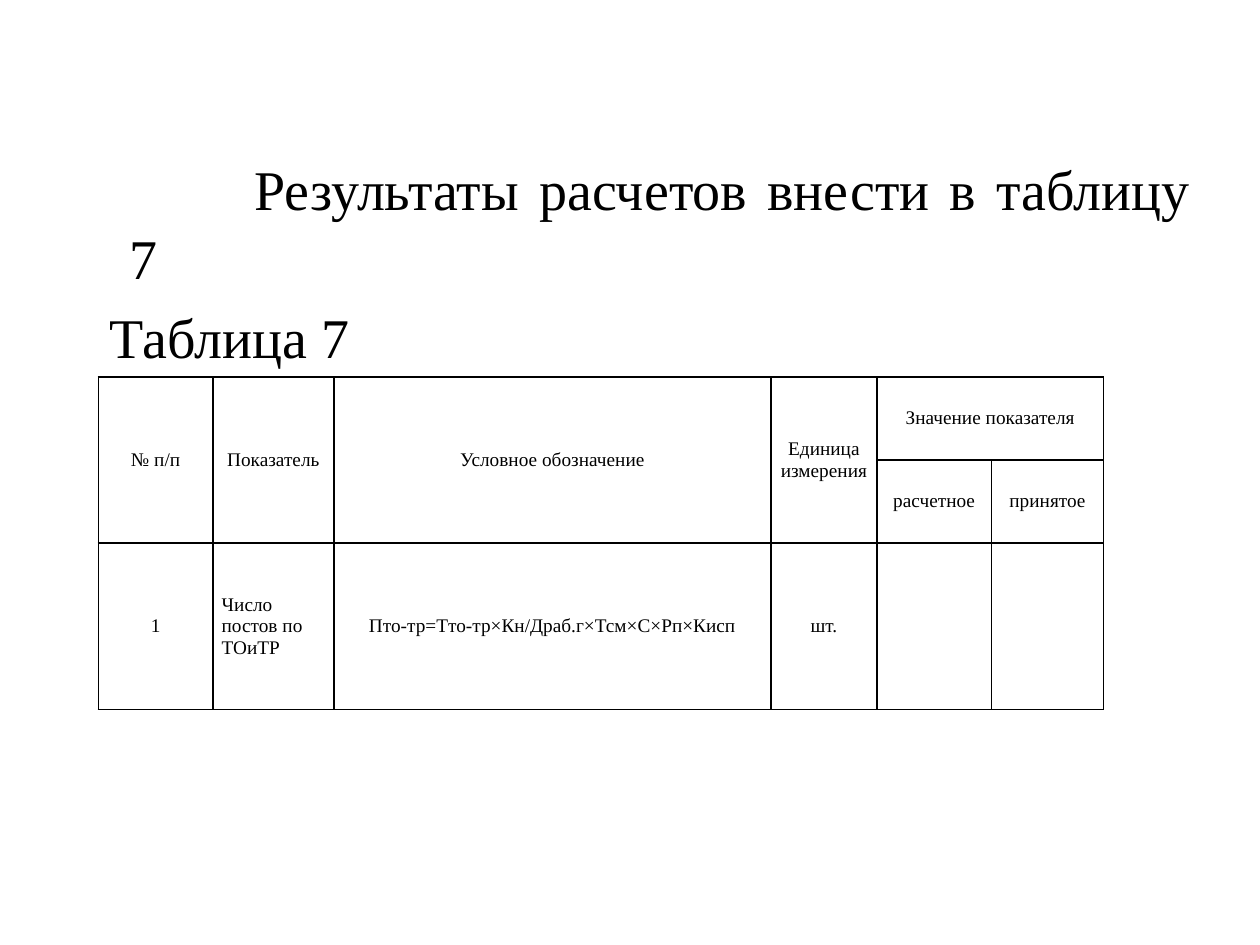
from lxml.etree import SubElement
from pptx import Presentation
from pptx.dml.color import RGBColor
from pptx.enum.text import MSO_ANCHOR, MSO_AUTO_SIZE, PP_ALIGN
from pptx.oxml import parse_xml
from pptx.oxml.ns import nsdecls, qn
from pptx.util import Inches, Pt

BLACK = RGBColor(0, 0, 0)
WHITE = RGBColor(255, 255, 255)
FONT = "Times New Roman"

COLUMN_WIDTHS = [0.91, 0.96, 3.47, 0.84, 0.91, 0.89]
ROW_HEIGHTS = [0.66, 0.66, 1.32]
ROWS = [
    ["№ п/п", "Показатель", "Условное обозначение", "Единица измерения",
     "Значение показателя", ""],
    ["", "", "", "", "расчетное", "принятое"],
    ["1", "Число постов по ТОиТР", "Пто-тр=Тто-тр×Кн/Драб.г×Тсм×С×Рп×Кисп",
     "шт.", "", ""],
]
# First and last cell of each merged block, as (row, column)
MERGES = [((0, column), (1, column)) for column in range(4)] + [((0, 4), (0, 5))]
LEFT_ALIGNED = (2, 1)


def write_text(paragraph, text, size=11, align=PP_ALIGN.CENTER, color=BLACK):
    """Put text in a paragraph with the given format."""
    paragraph.alignment = align
    paragraph.font.size = Pt(size)
    if text:
        run = paragraph.add_run()
        run.text = text
        run.font.name = FONT
        run.font.size = Pt(size)
        run.font.color.rgb = color


class SlideBuilder:
    def __init__(self, presentation):
        # Title and content layout: only its body is needed
        self.slide = presentation.slides.add_slide(presentation.slide_layouts[1])
        self.slide.background.fill.solid()
        self.slide.background.fill.fore_color.rgb = WHITE
        title = self.slide.shapes.title.element
        title.getparent().remove(title)

    def body(self, left, top, width, height, lines):
        shape = self.slide.placeholders[1]
        shape.left, shape.top = Inches(left), Inches(top)
        shape.width, shape.height = Inches(width), Inches(height)
        frame = shape.text_frame
        frame.word_wrap = True
        frame.auto_size = MSO_AUTO_SIZE.NONE
        for index, (text, indent, space_before) in enumerate(lines):
            paragraph = frame.add_paragraph() if index else frame.paragraphs[0]
            write_text(paragraph, text, size=32, align=PP_ALIGN.JUSTIFY)
            paragraph.line_spacing = Pt(39)
            paragraph.space_before = Pt(space_before)
            properties = paragraph._p.get_or_add_pPr()
            properties.set("marL", str(Inches(0.38)))
            properties.set("indent", str(Inches(indent)))
            bullet = SubElement(properties, qn("a:buNone"))
            properties.insert(2, bullet)

    def border(self, cell, width=1):
        properties = cell._tc.get_or_add_tcPr()
        for index, side in enumerate(("lnL", "lnR", "lnT", "lnB")):
            properties.insert(index, parse_xml(
                f'<a:{side} {nsdecls("a")} w="{Pt(width)}"><a:solidFill>'
                f'<a:srgbClr val="{BLACK}"/></a:solidFill></a:{side}>'))

    def table(self, left, top):
        frame = self.slide.shapes.add_table(
            len(ROW_HEIGHTS), len(COLUMN_WIDTHS), Inches(left), Inches(top),
            Inches(sum(COLUMN_WIDTHS)), Inches(sum(ROW_HEIGHTS)))
        table = frame.table
        table.first_row = table.horz_banding = False
        for column, width in zip(table.columns, COLUMN_WIDTHS):
            column.width = Inches(width)
        for row, height in zip(table.rows, ROW_HEIGHTS):
            row.height = Inches(height)
        for start, end in MERGES:
            table.cell(*start).merge(table.cell(*end))
        for row, texts in enumerate(ROWS):
            for column, text in enumerate(texts):
                cell = table.cell(row, column)
                cell.fill.background()
                cell.vertical_anchor = MSO_ANCHOR.MIDDLE
                cell.margin_left = cell.margin_right = Inches(0.07)
                cell.margin_top = cell.margin_bottom = 0
                left_side = (row, column) == LEFT_ALIGNED
                write_text(cell.text_frame.paragraphs[0], text,
                           align=PP_ALIGN.LEFT if left_side else PP_ALIGN.CENTER)
                self.border(cell)


def main():
    presentation = Presentation()
    presentation.slide_width, presentation.slide_height = Inches(10), Inches(7.5)
    builder = SlideBuilder(presentation)

    # Introduction and table caption: text, first-line indent, space before
    builder.body(0.55, 1.17, 9, 4.95, [
        ("Результаты расчетов внести в таблицу 7", 0.99, 0),
        ("Таблица 7", -0.16, 6.4),
    ])

    # Results table
    builder.table(0.78, 2.99)
    presentation.save("out.pptx")


if __name__ == "__main__":
    main()
